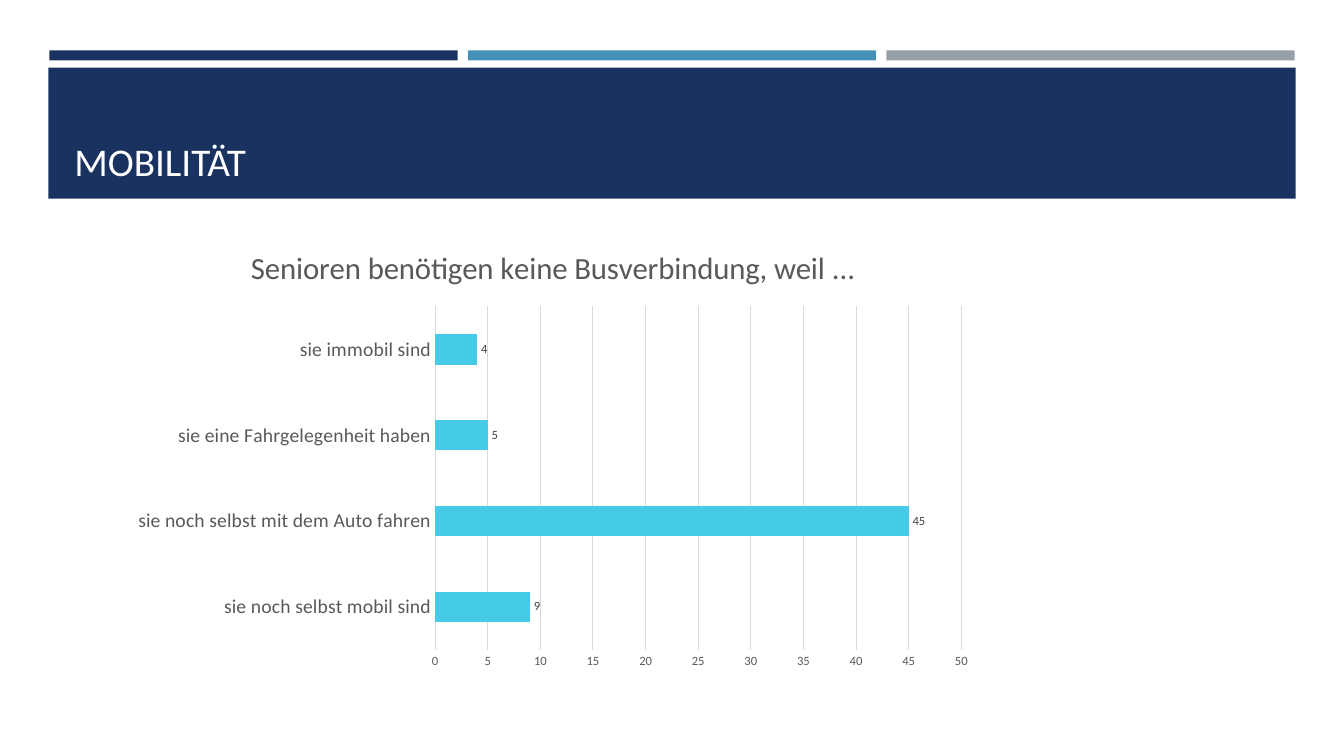
from dataclasses import dataclass
from pptx import Presentation
from pptx.chart.data import CategoryChartData as ChartData
from pptx.dml.color import RGBColor as RGB
from pptx.enum.chart import XL_CHART_TYPE as Kind, XL_LABEL_POSITION as Pos, XL_TICK_MARK as Tick
from pptx.enum.shapes import MSO_SHAPE as Shape
from pptx.enum.text import MSO_ANCHOR as Anchor
from pptx.util import Inches, Pt


@dataclass(frozen=True)
class Theme:
    font: str = "Calibri"
    navy: str = "1A3260"
    blue: str = "4590B8"
    gray: str = "969FA7"
    white: str = "FFFFFF"
    cyan: str = "45CBE8"
    ink: str = "595959"
    dark: str = "404040"
    grid: str = "D9D9D9"
    title: int = 28
    head: int = 22
    label: int = 14
    small: int = 9


THEME = Theme()


def style(font, size, color):
    """Set the theme font with a size and a colour."""
    font.name, font.size, font.bold = THEME.font, Pt(size), False
    font.color.rgb = RGB.from_string(color)


def rule(line, color):
    """Draw a thin chart line."""
    line.color.rgb = RGB.from_string(color)
    line.width = Pt(0.75)


def add_bar(slide, box, color):
    """Add a plain filled rectangle."""
    bar = slide.shapes.add_shape(Shape.RECTANGLE, *map(Inches, box))
    bar.shadow.inherit = False
    bar.fill.solid()
    bar.fill.fore_color.rgb = RGB.from_string(color)
    bar.line.fill.background()


def add_text(slide, box, text, size, color, anchor=Anchor.TOP):
    """Add a wrapped text box."""
    frame = slide.shapes.add_textbox(*map(Inches, box)).text_frame
    frame.word_wrap = True
    frame.vertical_anchor = anchor
    run = frame.paragraphs[0].add_run()
    run.text = text
    style(run.font, size, color)


def add_bars(slide, box, title, rows):
    """Add a horizontal bar chart with value labels."""
    data = ChartData()
    data.categories = [name for name, _ in rows]
    data.add_series("Anzahl", [value for _, value in rows])
    chart = slide.shapes.add_chart(Kind.BAR_CLUSTERED, *map(Inches, box), data).chart
    chart.has_legend = False
    style(chart.font, THEME.small, THEME.ink)
    chart.has_title = True
    chart.chart_title.include_in_layout = False
    head = chart.chart_title.text_frame.paragraphs[0].add_run()
    head.text = title
    style(head.font, THEME.head, THEME.ink)

    names, scale = chart.category_axis, chart.value_axis
    for axis, size in ((names, THEME.label), (scale, THEME.small)):
        axis.major_tick_mark = axis.minor_tick_mark = Tick.NONE
        style(axis.tick_labels.font, size, THEME.ink)
    rule(names.format.line, THEME.grid)
    scale.format.line.fill.background()
    scale.minimum_scale, scale.maximum_scale, scale.major_unit = 0, 50, 5
    rule(scale.major_gridlines.format.line, THEME.grid)

    plot = chart.plots[0]
    plot.gap_width = 182
    plot.vary_by_categories = False
    fill = plot.series[0].format.fill
    fill.solid()
    fill.fore_color.rgb = RGB.from_string(THEME.cyan)
    plot.has_data_labels = True
    labels = plot.data_labels
    labels.show_value = True
    labels.position = Pos.OUTSIDE_END
    style(labels.font, THEME.small, THEME.dark)


def main():
    """Build and save the slide."""
    deck = Presentation()
    deck.slide_width, deck.slide_height = Inches(13.33), Inches(7.5)
    slide = deck.slides.add_slide(deck.slide_layouts[6])
    for i, color in enumerate((THEME.navy, THEME.blue, THEME.gray)):
        add_bar(slide, (0.49 + 4.15 * i, 0.5, 4.05, 0.1), color)
    add_bar(slide, (0.48, 0.67, 12.37, 1.3), THEME.navy)
    add_text(slide, (0.64, 0.77, 12.06, 1.11), "MOBILITÄT",
             size=THEME.title, color=THEME.white, anchor=Anchor.BOTTOM)
    add_bars(slide, (1.2, 2.25, 8.57, 4.47), "Senioren benötigen keine Busverbindung, weil ...", (
        ("sie noch selbst mobil sind", 9),
        ("sie noch selbst mit dem Auto fahren", 45),
        ("sie eine Fahrgelegenheit haben", 5),
        ("sie immobil sind", 4),
    ))
    deck.save("out.pptx")


if __name__ == "__main__":
    main()
